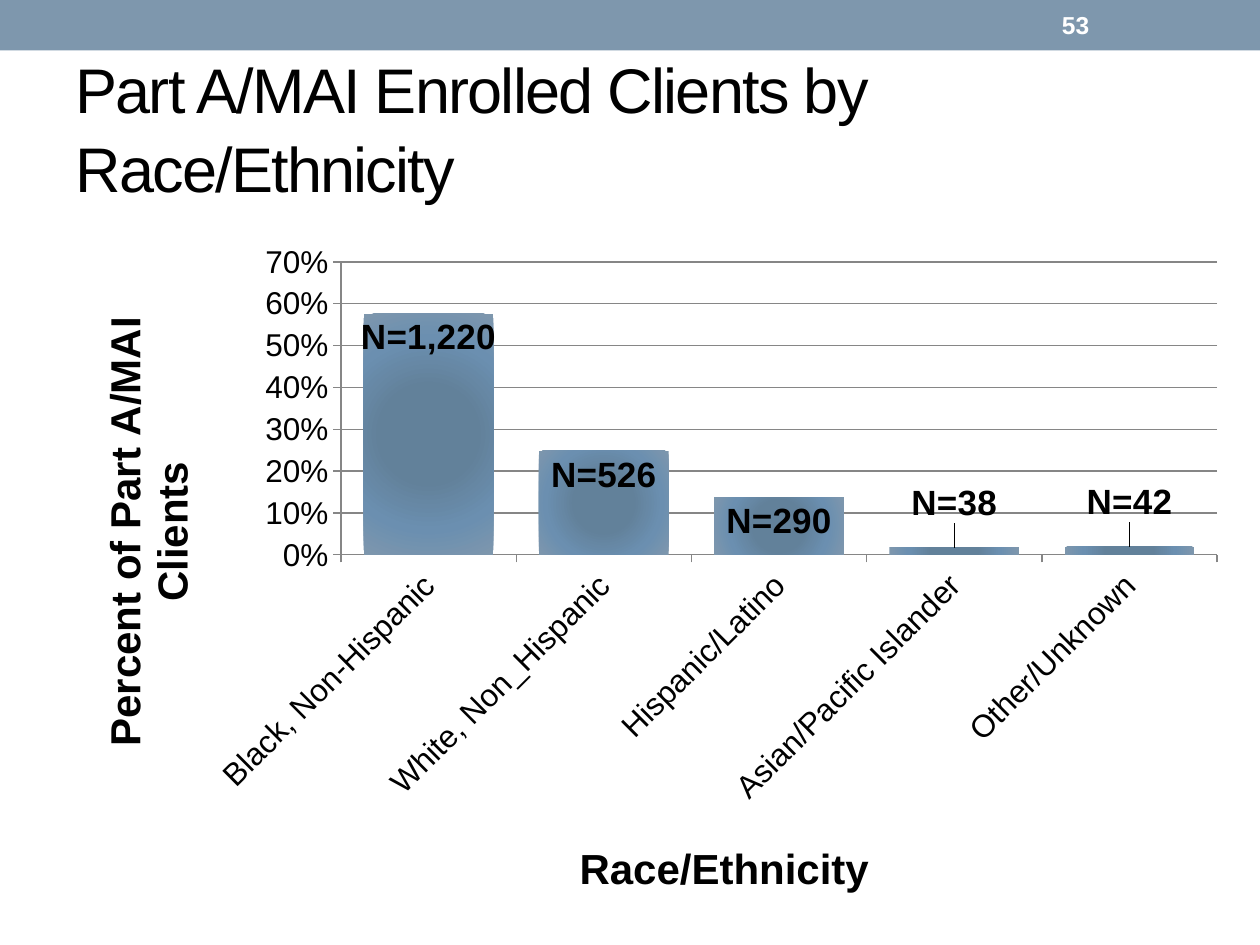
from lxml import etree
from pptx import Presentation
from pptx.chart.data import CategoryChartData
from pptx.dml.color import RGBColor
from pptx.enum.chart import XL_CHART_TYPE as ChartType, XL_LABEL_POSITION as LabelPos, XL_TICK_MARK as Tick
from pptx.enum.shapes import MSO_SHAPE as Shape
from pptx.enum.text import MSO_ANCHOR as Anchor
from pptx.oxml import parse_xml
from pptx.oxml.ns import qn
from pptx.util import Inches, Pt

COLORS = {"band": "7E97AD", "mid": "6B8FB0", "core": "62819A",
          "text": "000000", "white": "FFFFFF", "grid": "868686"}
FONT = "Arial"
RGB = {name: RGBColor.from_string(value) for name, value in COLORS.items()}


def style(font, size, color="text", bold=False):
    font.name, font.size, font.bold = FONT, Pt(size), bold
    font.color.rgb = RGB[color]


def place(parent, index, **values):
    for old in parent.findall(qn("c:layout")):
        parent.remove(old)
    layout = etree.Element(qn("c:layout"))
    manual = etree.SubElement(layout, qn("c:manualLayout"))
    for tag, value in values.items():
        etree.SubElement(manual, qn("c:" + tag)).set("val", str(value))
    parent.insert(index, layout)


prs = Presentation()
prs.slide_width, prs.slide_height = Inches(10), Inches(7.5)
W, H = prs.slide_width, prs.slide_height
s = prs.slides.add_slide(prs.slide_layouts[6])

band = s.shapes.add_shape(Shape.RECTANGLE, 0, 0, W, Inches(0.4))
band.shadow.inherit = False
band.fill.solid()
band.fill.fore_color.rgb = RGB["band"]
band.line.fill.background()

texts = [
    ("Part A/MAI Enrolled Clients by Race/Ethnicity", (0.05, 0.5 / 7.5, 0.925, 1 / 7.5), 36, "text", False),
    ("53", (0.833, 0.02 / 7.5, 0.117, 0.048), 14, "white", True),
]
for text, (x, y, w, h), size, color, bold in texts:
    sp = s.shapes.add_textbox(int(x * W), int(y * H), int(w * W), int(h * H))
    tf = sp.text_frame
    tf.word_wrap = True
    tf.vertical_anchor = Anchor.MIDDLE
    tf.text = text
    p = tf.paragraphs[0]
    r = p.runs[0]
    style(r.font, size, color, bold)
    if size == 36:
        p.line_spacing = 1.05
        r.font._element.set("spc", "-100")

data = CategoryChartData(number_format="0.00%")
data.categories = ["Black, Non-Hispanic", "White, Non_Hispanic", "Hispanic/Latino",
                   "Asian/Pacific Islander", "Other/Unknown"]
data.add_series("Series 1", [0.5766, 0.2486, 0.1371, 0.018, 0.0198])
chart = s.shapes.add_chart(ChartType.COLUMN_STACKED, int(0.04 * W), int(0.244 * H),
                           int(0.945 * W), int(0.721 * H), data).chart
chart.has_legend = chart.has_title = False
style(chart.font, 18)
place(chart._chartSpace.chart.plotArea, 0, layoutTarget="inner", xMode="edge", yMode="edge",
      x=0.244, y=0.046, w=0.736, h=0.43)

cat, val = chart.category_axis, chart.value_axis
axes = [(cat, "Race/Ethnicity", 0.438, 0.885, 0), (val, "Percent of Part A/MAI Clients", 0.033, 0.116, -5400000)]
for axis, title, x, y, turn in axes:
    axis.major_tick_mark, axis.minor_tick_mark = Tick.OUTSIDE, Tick.NONE
    axis.format.line.color.rgb = RGB["grid"]
    style(axis.tick_labels.font, 18)
    tf = axis.axis_title.text_frame
    tf.text = title
    style(tf.paragraphs[0].runs[0].font, 24, bold=True)
    tf._txBody.find(qn("a:bodyPr")).set("rot", str(turn))
    place(axis.axis_title._element, 1, xMode="edge", yMode="edge", x=x, y=y)
cat._element.find(qn("c:txPr")).find(qn("a:bodyPr")).set("rot", "-2700000")
val.minimum_scale, val.maximum_scale, val.major_unit = 0, 0.7, 0.1
val.tick_labels.number_format = "0%"
val.tick_labels.number_format_is_linked = False
val.has_major_gridlines = True
val.major_gridlines.format.line.color.rgb = RGB["grid"]

plot = chart.plots[0]
plot.gap_width, plot.overlap, plot.vary_by_categories = 35, 100, False
series = plot.series[0]
series.format.fill.solid()
bar = series.format.fill._xPr
stops = "".join(f'<a:gs pos="{pos}"><a:srgbClr val="{COLORS[name]}"/></a:gs>'
                for pos, name in [(0, "core"), (35000, "core"), (70000, "mid"), (100000, "band")])
bar.replace(bar.find(qn("a:solidFill")), parse_xml(
    '<a:gradFill xmlns:a="http://schemas.openxmlformats.org/drawingml/2006/main" rotWithShape="1">'
    f'<a:gsLst>{stops}</a:gsLst><a:path path="circle">'
    '<a:fillToRect l="50000" t="50000" r="50000" b="50000"/></a:path></a:gradFill>'))

labels = series.data_labels
labels.show_value = True
labels.number_format, labels.number_format_is_linked = "0.00%", False
labels.position = LabelPos.INSIDE_END
style(labels.font, 20, bold=True)
for i, (count, shift) in enumerate([("1,220", 0), ("526", 0), ("290", 0), ("38", -0.1), ("42", -0.1)]):
    label = series.points[i].data_label
    label.text_frame.text = f"N={count}"
    style(label.text_frame.paragraphs[0].runs[0].font, 20, bold=True)
    label.position = LabelPos.INSIDE_END
    if shift:
        place(labels._element.findall(qn("c:dLbl"))[i], 1, x=0, y=shift)

prs.save("out.pptx")
